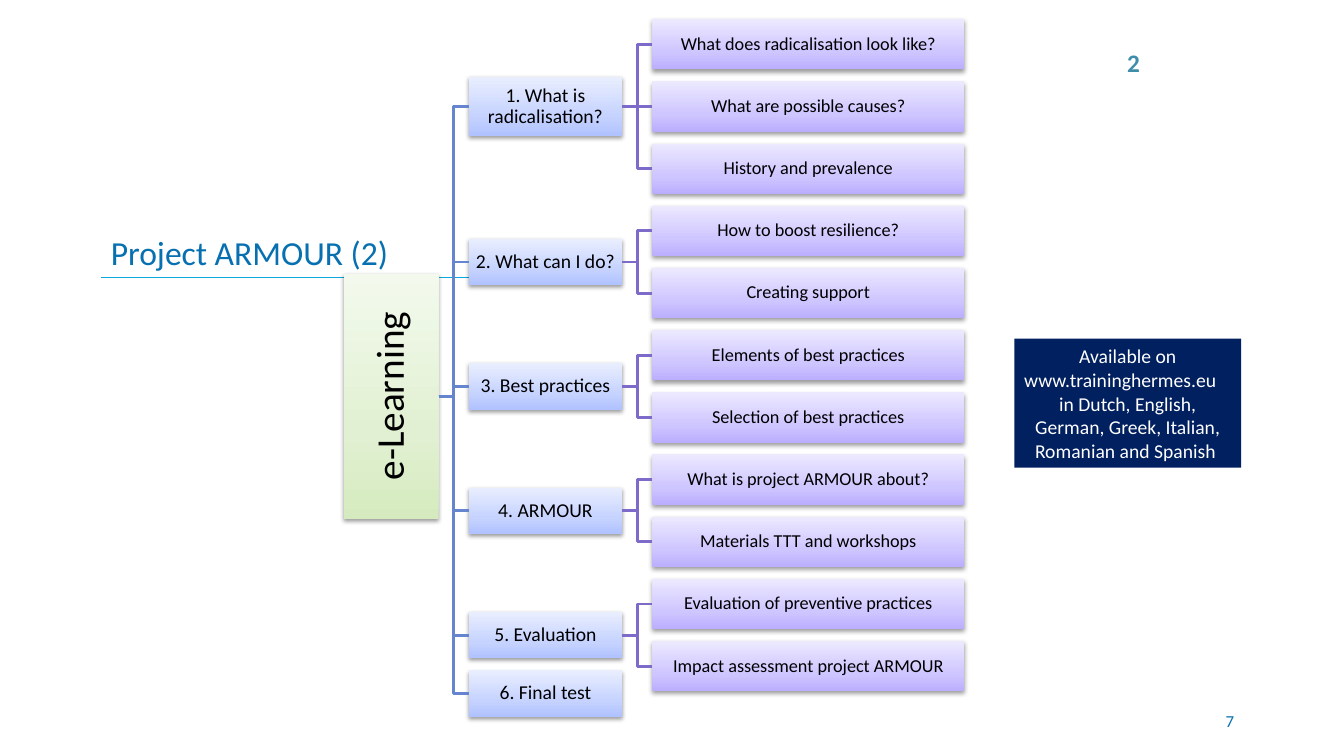
from pptx import Presentation
from pptx import util as u
from pptx.dml.color import RGBColor
from pptx.enum import shapes, text
from pptx.oxml import parse_xml
from pptx.oxml.ns import nsdecls, qn

BLACK = RGBColor(0x00, 0x00, 0x00)
WHITE = RGBColor(0xFF, 0xFF, 0xFF)
NAVY = RGBColor(0x00, 0x20, 0x60)
BLUE = RGBColor(0x07, 0x70, 0xB1)
TEAL = RGBColor(0x3E, 0x8E, 0xA9)
RULE = RGBColor(0x0B, 0xA7, 0xDF)
TOPIC_LINE = RGBColor(0x65, 0x85, 0xCF)
LESSON_LINE = RGBColor(0x7E, 0x6B, 0xC9)
GREENS = [RGBColor(0xD5, 0xEB, 0xBF), RGBColor(0xE1, 0xF0, 0xD2), RGBColor(0xF3, 0xFA, 0xED)]
BLUES = [RGBColor(0xB0, 0xC2, 0xFF), RGBColor(0xC6, 0xD3, 0xFF), RGBColor(0xE9, 0xEE, 0xFF)]
PURPLES = [RGBColor(0xBB, 0xAE, 0xFF), RGBColor(0xCE, 0xC6, 0xFF), RGBColor(0xEC, 0xE9, 0xFF)]

LEFT, CENTER, RIGHT = text.PP_ALIGN.LEFT, text.PP_ALIGN.CENTER, text.PP_ALIGN.RIGHT
MIDDLE = text.MSO_ANCHOR.MIDDLE
FIRST_ROW, ROW_PITCH = 0.44, 0.617

COURSE = [
    ("1. What is radicalisation?", 0.59, ["What does radicalisation look like?",
                                          "What are possible causes?",
                                          "History and prevalence"]),
    ("2. What can I do?", 0.46, ["How to boost resilience?", "Creating support"]),
    ("3. Best practices", 0.46, ["Elements of best practices", "Selection of best practices"]),
    ("4. ARMOUR", 0.46, ["What is project ARMOUR about?", "Materials TTT and workshops"]),
    ("5. Evaluation", 0.46, ["Evaluation of preventive practices",
                             "Impact assessment project ARMOUR"]),
]


class SlideBuilder:
    """Holds the font and the current slide and draws each kind of element."""

    def __init__(self, slide, font="Calibri"):
        self.slide = slide
        self.font = font

    def fill_text(self, frame, lines, size, color, bold=False):
        for index, (line, alignment) in enumerate(lines):
            paragraph = frame.add_paragraph() if index else frame.paragraphs[0]
            paragraph.text = line
            paragraph.alignment = alignment
            paragraph.font.name = self.font
            paragraph.font.size = u.Pt(size)
            paragraph.font.bold = bold
            paragraph.font.color.rgb = color

    def label(self, place, line, size, color, alignment=LEFT,
              anchor=text.MSO_ANCHOR.TOP, wrap=True, bold=False):
        frame = self.slide.shapes.add_textbox(*map(u.Inches, place)).text_frame
        frame.word_wrap = wrap
        frame.vertical_anchor = anchor
        self.fill_text(frame, [(line, alignment)], size, color, bold)

    def box(self, place, lines, size, color):
        shape = self.slide.shapes.add_shape(shapes.MSO_SHAPE.RECTANGLE, *map(u.Inches, place))
        shape.shadow.inherit = False
        shape.line.fill.background()
        frame = shape.text_frame
        frame.word_wrap = True
        frame.vertical_anchor = MIDDLE
        self.fill_text(frame, lines, size, color)
        return shape

    def note(self, place, lines, size, fill):
        shape = self.box(place, lines, size, WHITE)
        shape.fill.solid()
        shape.fill.fore_color.rgb = fill

    def node(self, left, middle, width, height, line, size, colors):
        shape = self.box((left, middle - height / 2, width, height), [(line, CENTER)], size, BLACK)
        shape.fill.gradient()
        shape.fill.gradient_angle = 90
        properties = shape._element.spPr
        stops = properties.find(".//" + qn("a:gsLst"))
        stops.clear()
        for position, color in zip((0, 35000, 100000), colors):
            stops.append(parse_xml(f'<a:gs {nsdecls("a")} pos="{position}">'
                                   f'<a:srgbClr val="{color}"/></a:gs>'))
        properties.find(qn("a:effectLst")).append(parse_xml(
            f'<a:outerShdw {nsdecls("a")} blurRad="40000" dist="20000" dir="5400000" '
            'rotWithShape="0"><a:srgbClr val="000000"><a:alpha val="38000"/></a:srgbClr>'
            '</a:outerShdw>'))
        frame = shape.text_frame
        frame.margin_left = frame.margin_right = u.Inches(0.01)
        frame.margin_top = frame.margin_bottom = u.Inches(0.01)
        frame.paragraphs[0].line_spacing = 0.9
        return shape

    def line(self, kind, start, end, color, width):
        connector = self.slide.shapes.add_connector(kind, *map(u.Inches, start + end))
        connector.line.color.rgb = color
        connector.line.width = u.Pt(width)
        connector._element.spPr.append(parse_xml(f'<a:effectLst {nsdecls("a")}/>'))
        return connector

    def branch(self, parent, child, color):
        drop = abs(parent.top + parent.height / 2 - child.top - child.height / 2)
        level = drop < u.Inches(0.02)
        kind = shapes.MSO_CONNECTOR.STRAIGHT if level else shapes.MSO_CONNECTOR.ELBOW
        connector = self.line(kind, (0, 0), (0, 0), color, 2)
        connector.begin_connect(parent, 3)
        connector.end_connect(child, 1)


def main():
    presentation = Presentation()
    presentation.slide_width = u.Inches(13.33)
    presentation.slide_height = u.Inches(7.5)
    builder = SlideBuilder(presentation.slides.add_slide(presentation.slide_layouts[6]))

    builder.line(shapes.MSO_CONNECTOR.STRAIGHT, (1, 2.75), (5, 2.75), RULE, 0.75)
    builder.label((1, 1.58, 4.05, 1.17), "Project ARMOUR (2)", 24, BLUE,
                  anchor=text.MSO_ANCHOR.BOTTOM)
    builder.label((9.56, 6.95, 2.78, 0.4), "7", 12, BLUE, RIGHT, MIDDLE)

    root = builder.node(3.41, 3.93, 0.94, 2.43, "e-Learning", 28, GREENS)
    root.text_frame._txBody.bodyPr.set("vert", "vert270")

    row = 0
    for topic_name, height, lessons in COURSE:
        middle = FIRST_ROW + ROW_PITCH * (row + (len(lessons) - 1) / 2)
        topic = builder.node(4.65, middle, 1.52, height, topic_name, 14, BLUES)
        builder.branch(root, topic, TOPIC_LINE)
        for lesson_name in lessons:
            lesson = builder.node(6.47, FIRST_ROW + ROW_PITCH * row, 3.09, 0.5,
                                  lesson_name, 13, PURPLES)
            builder.branch(topic, lesson, LESSON_LINE)
            row += 1
    final_test = builder.node(4.65, 6.88, 1.52, 0.46, "6. Final test", 14, BLUES)
    builder.branch(root, final_test, TOPIC_LINE)

    builder.note((10.06, 3.36, 2.25, 1.28), [
        ("Available on", CENTER),
        ("www.traininghermes.eu", LEFT),
        ("in Dutch, English, German, Greek, Italian, Romanian and Spanish ", CENTER),
    ], 14, NAVY)
    builder.label((11.08, 0.42, 0.33, 0.4), "2", 18, TEAL, wrap=False, bold=True)

    presentation.save("out.pptx")


if __name__ == "__main__":
    main()
